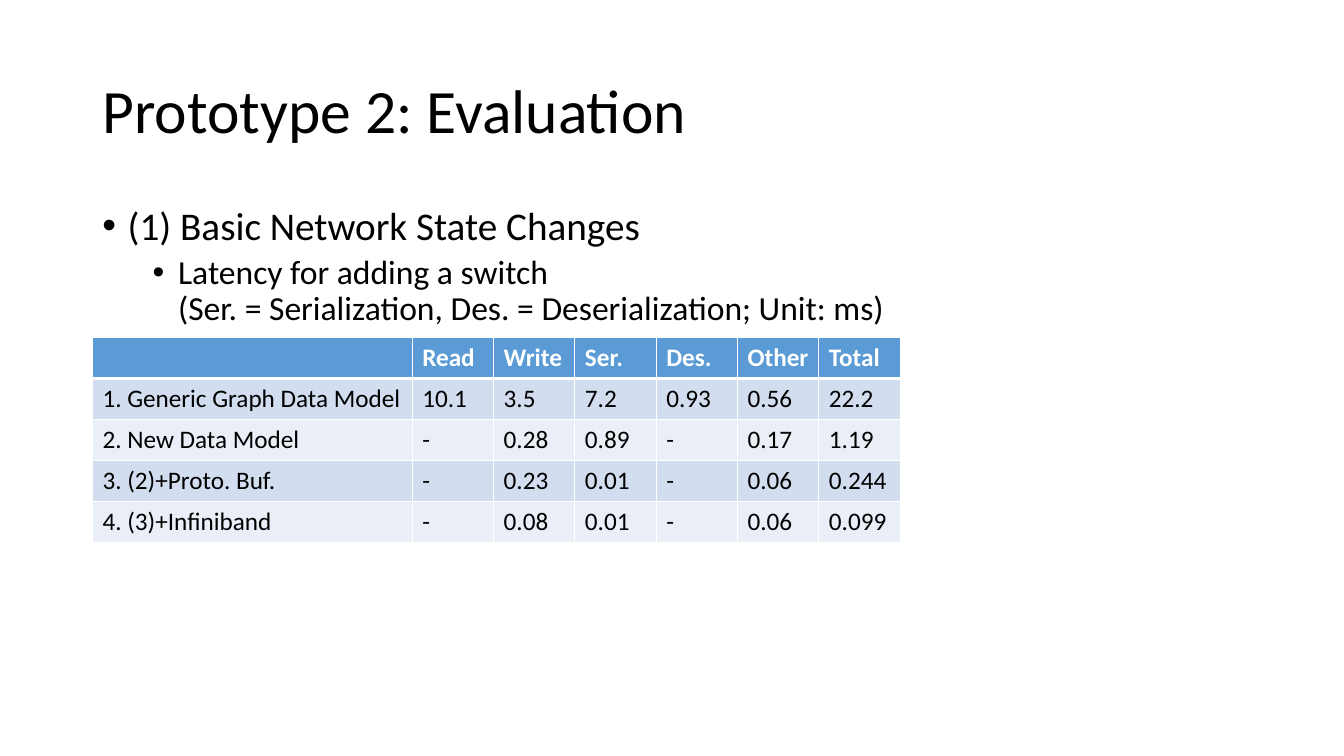
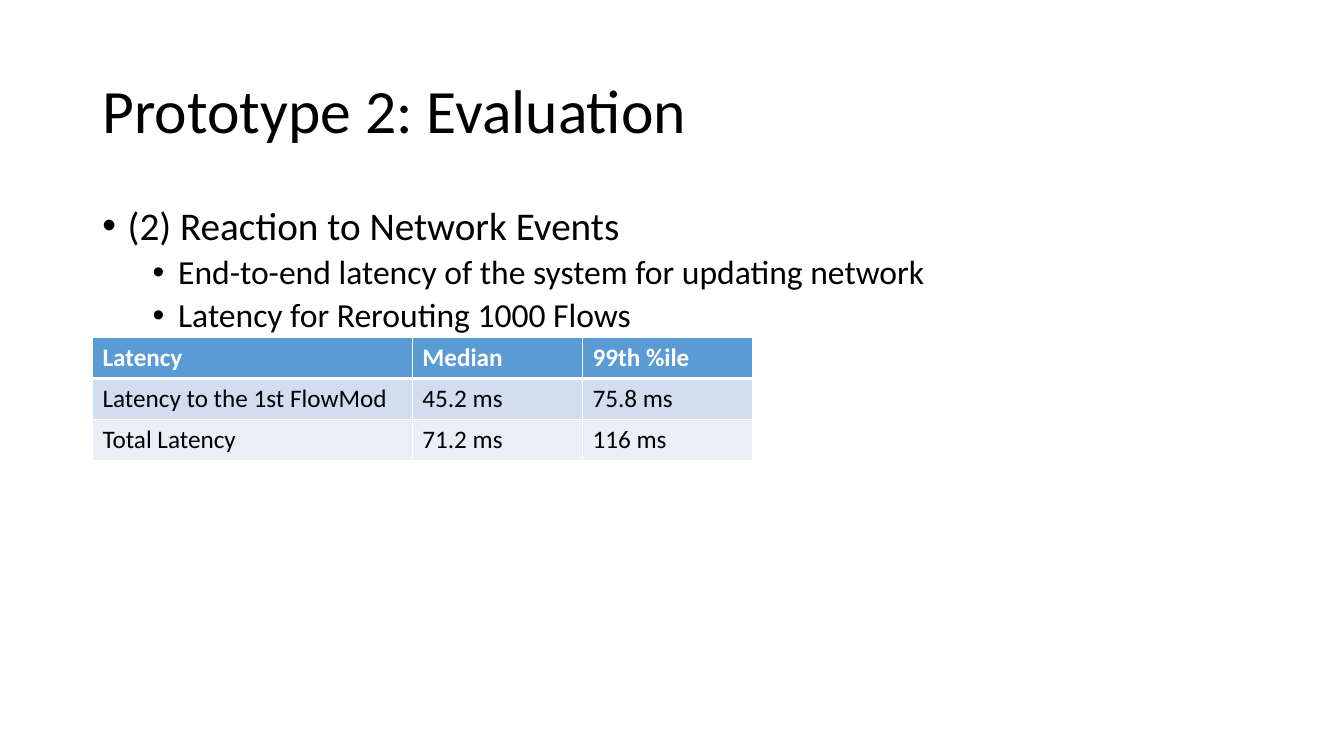
from lxml.etree import SubElement
from pptx import Presentation
from pptx.dml.color import RGBColor
from pptx.enum.text import MSO_ANCHOR, MSO_AUTO_SIZE, PP_ALIGN
from pptx.oxml.ns import qn
from pptx.util import Cm, Pt

COLOURS = {
    "text": "000000",
    "white": "FFFFFF",
    "header": "5B9BD5",
    "odd_row": "D2DEEF",
    "even_row": "EAEFF7",
}
FONT = "Calibri"
LEFT, WIDTH = Cm(2.33), Cm(29.21)
# Per bullet level: text size, space before, left margin
LEVELS = [(28, 10, Cm(0.64)), (24, 5, Cm(1.91))]
HANGING = Cm(0.64)
ROW_HEIGHT = Cm(1.03)
LABEL_WIDTH = 8.06


def colour(name):
    return RGBColor.from_string(COLOURS[name])


class Deck:
    """Holds the shared style and the slide being built."""

    def __init__(self):
        self.presentation = Presentation()
        self.presentation.slide_width = Cm(33.87)
        self.presentation.slide_height = Cm(19.05)
        self.slide = None

    def add_run(self, paragraph, text, size, colour_name="text", bold=False):
        run = paragraph.add_run()
        run.text = text
        run.font.name = FONT
        run.font.size = Pt(size)
        run.font.bold = bold
        run.font.color.rgb = colour(colour_name)

    def add_slide(self, title):
        layout = self.presentation.slide_layouts.get_by_name("Title Only")
        self.slide = self.presentation.slides.add_slide(layout)
        shape = self.slide.shapes.title
        shape.left, shape.top, shape.width, shape.height = LEFT, Cm(1.01), WIDTH, Cm(3.68)
        frame = shape.text_frame
        frame.auto_size = MSO_AUTO_SIZE.NONE
        frame.vertical_anchor = MSO_ANCHOR.MIDDLE
        paragraph = frame.paragraphs[0]
        paragraph.alignment = PP_ALIGN.LEFT
        paragraph.line_spacing = 0.9
        self.add_run(paragraph, title, 44)

    def add_bullets(self, bullets):
        """Add (level, lines) bullets; lines are parted by line breaks."""
        frame = self.slide.shapes.add_textbox(LEFT, Cm(5.07), WIDTH, Cm(12.09)).text_frame
        frame.word_wrap = True
        for index, (level, lines) in enumerate(bullets):
            paragraph = frame.add_paragraph() if index else frame.paragraphs[0]
            size, space_before, margin = LEVELS[level]
            paragraph.level = level
            paragraph.line_spacing = 0.9
            paragraph.space_before = Pt(space_before)
            properties = paragraph._p.get_or_add_pPr()
            properties.set("marL", str(margin))
            properties.set("indent", str(-HANGING))
            SubElement(properties, qn("a:buFont"), typeface="Arial")
            SubElement(properties, qn("a:buChar"), char="•")
            for line_index, line in enumerate(lines):
                if line_index:
                    paragraph.add_line_break()
                self.add_run(paragraph, line, size)

    def add_borders(self, cell, top, bottom):
        """Draw white cell borders; top and bottom are widths in points."""
        properties = cell._tc.get_or_add_tcPr()
        sides = [("L", 1), ("R", 1), ("T", top), ("B", bottom)]
        for position, (side, width) in enumerate(sides):
            line = SubElement(properties, qn(f"a:ln{side}"), w=str(Pt(width)))
            fill = SubElement(line, qn("a:solidFill"))
            SubElement(fill, qn("a:srgbClr"), val=COLOURS["white"])
            properties.insert(position, line)  # borders come before the fill

    def add_table(self, value_width, rows):
        """Add a table with a header row and equally wide value columns."""
        widths = [Cm(LABEL_WIDTH)] + [Cm(value_width)] * (len(rows[0]) - 1)
        table = self.slide.shapes.add_table(
            len(rows), len(widths), LEFT, Cm(8.51), sum(widths), ROW_HEIGHT * len(rows)
        ).table
        for column, width in zip(table.columns, widths):
            column.width = width
        for row_index, values in enumerate(rows):
            header = row_index == 0
            fill_name = "header" if header else "odd_row" if row_index % 2 else "even_row"
            for column_index, value in enumerate(values):
                cell = table.cell(row_index, column_index)
                cell.fill.solid()
                cell.fill.fore_color.rgb = colour(fill_name)
                self.add_borders(cell, 3 if row_index == 1 else 1, 3 if header else 1)
                if value:
                    paragraph = cell.text_frame.paragraphs[0]
                    self.add_run(paragraph, value, 18, "white" if header else "text", header)


def main():
    deck = Deck()
    title = "Prototype 2: Evaluation"

    # Basic network state changes
    deck.add_slide(title)
    deck.add_bullets([
        (0, ["(1) Basic Network State Changes"]),
        (1, ["Latency for adding a switch",
             "(Ser. = Serialization, Des. = Deserialization; Unit: ms)"]),
    ])
    deck.add_table(2.05, [
        ["", "Read", "Write", "Ser.", "Des.", "Other", "Total"],
        ["1. Generic Graph Data Model", "10.1", "3.5", "7.2", "0.93", "0.56", "22.2"],
        ["2. New Data Model", "-", "0.28", "0.89", "-", "0.17", "1.19"],
        ["3. (2)+Proto. Buf.", "-", "0.23", "0.01", "-", "0.06", "0.244"],
        ["4. (3)+Infiniband", "-", "0.08", "0.01", "-", "0.06", "0.099"],
    ])

    # Reaction to network events
    deck.add_slide(title)
    deck.add_bullets([
        (0, ["(2) Reaction to Network Events"]),
        (1, ["End-to-end latency of the system for updating network"]),
        (1, ["Latency for Rerouting 1000 Flows"]),
    ])
    deck.add_table(4.29, [
        ["Latency", "Median", "99th %ile"],
        ["Latency to the 1st FlowMod", "45.2 ms", "75.8 ms"],
        ["Total Latency", "71.2 ms", "116 ms"],
    ])

    deck.presentation.save("out.pptx")


if __name__ == "__main__":
    main()
